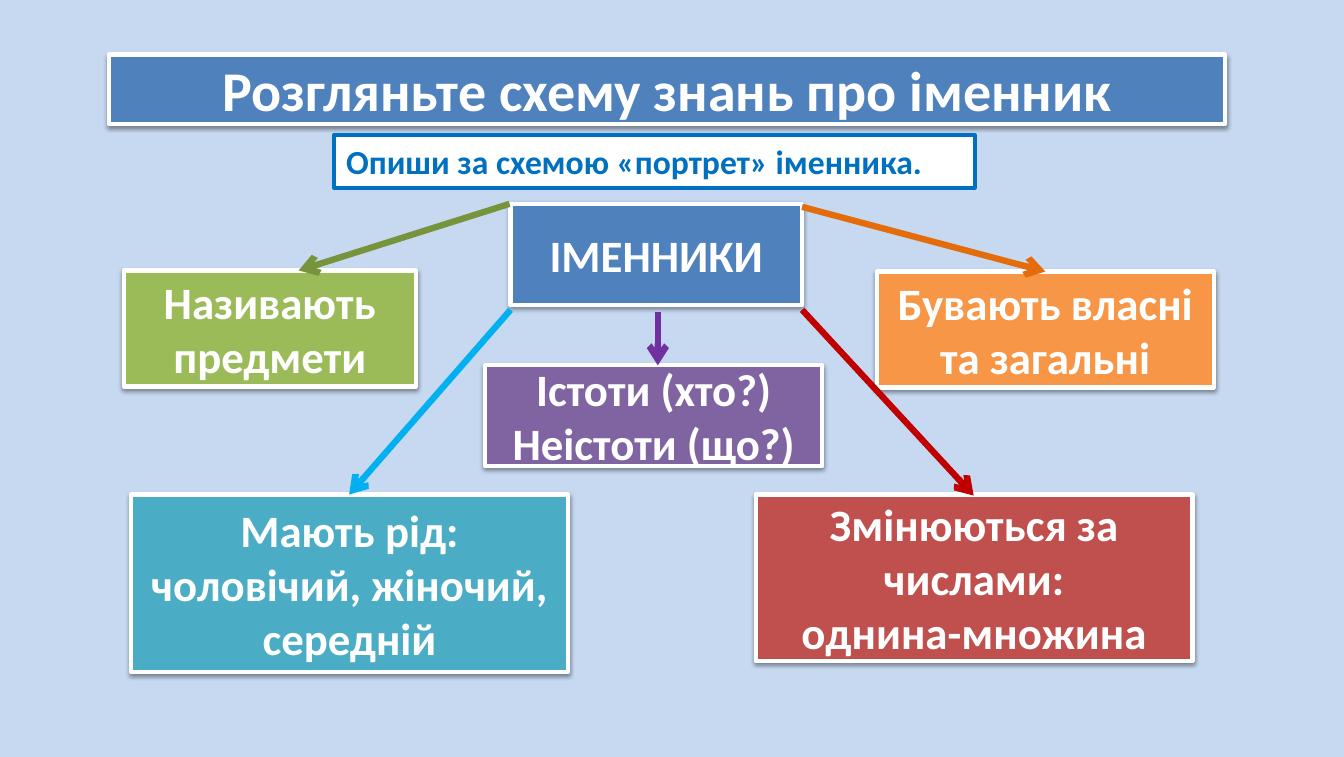
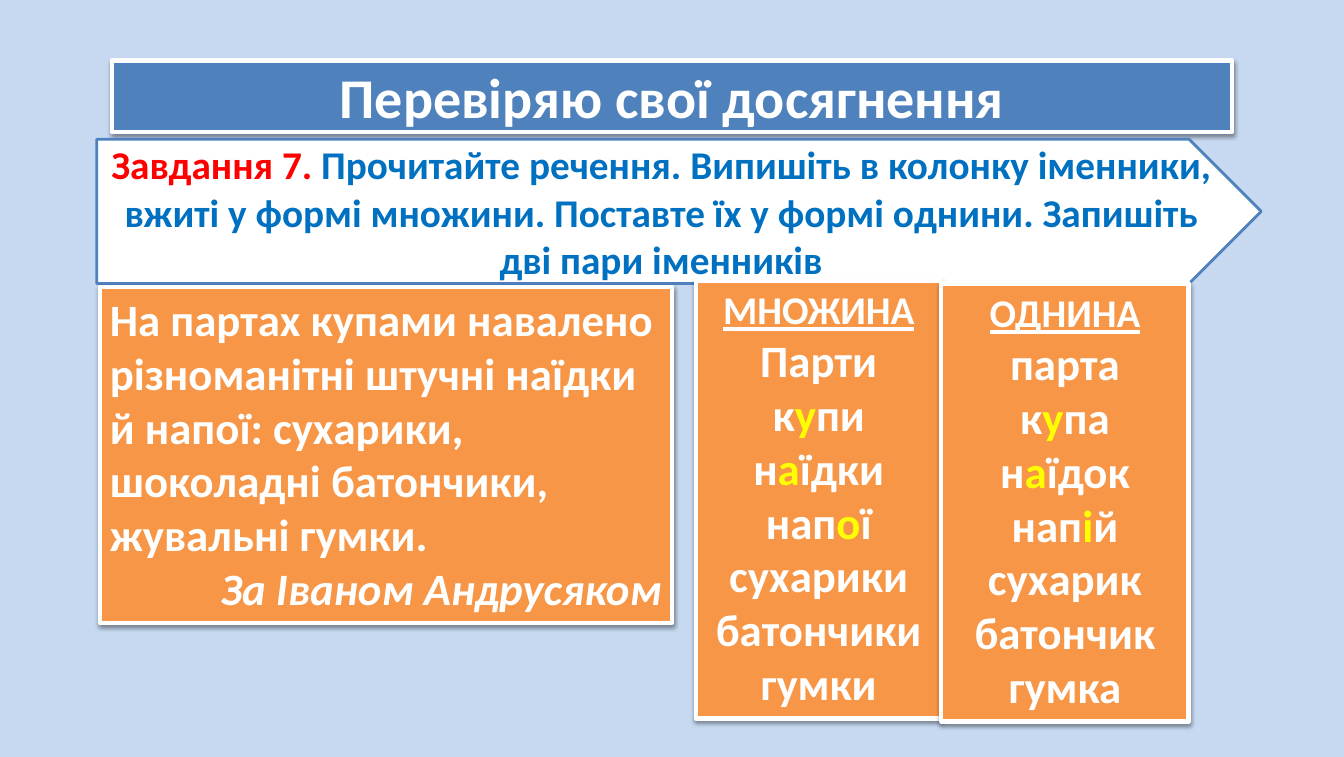
import pptx
import pptx.util
import pptx.dml.color
import pptx.enum.shapes
import pptx.enum.text
import pptx.oxml
import pptx.oxml.ns

Inches = pptx.util.Inches
Pt = pptx.util.Pt
SHAPE = pptx.enum.shapes.MSO_SHAPE
ALIGN = pptx.enum.text.PP_ALIGN
ANCHOR = pptx.enum.text.MSO_ANCHOR

# Shared look
FONT = "Calibri"
BACKGROUND, WHITE, BLUE, ORANGE = "C6D9F1", "FFFFFF", "4F81BD", "F79646"
TASK_BLUE, RED, YELLOW = "0070C0", "FF0000", "FFFF00"
TITLE_SIZE, BODY_SIZE, TASK_SIZE, HINT_SIZE = 40, 32, 28, 24
SHADOW = (
    '<a:effectLst %s><a:outerShdw blurRad="40000" dist="20000" dir="5400000" rotWithShape="0">'
    '<a:srgbClr val="000000"><a:alpha val="38000"/></a:srgbClr></a:outerShdw></a:effectLst>'
    % pptx.oxml.ns.nsdecls("a")
)


def rgb(code):
    return pptx.dml.color.RGBColor.from_string(code)


def add_panel(slide, box, fill, line=WHITE, line_width=3, kind=SHAPE.RECTANGLE,
              shadow=True, anchor=ANCHOR.MIDDLE, grow=False, inset=(0.1, 0.05)):
    """Draw a filled, outlined panel and return its text frame."""
    panel = slide.shapes.add_shape(kind, *(Inches(v) for v in box))
    panel.fill.solid()
    panel.fill.fore_color.rgb = rgb(fill)
    panel.line.color.rgb = rgb(line)
    panel.line.width = Pt(line_width)
    panel.shadow.inherit = False
    if shadow:
        properties = panel._element.spPr
        properties.remove(properties.find(pptx.oxml.ns.qn("a:effectLst")))
        properties.append(pptx.oxml.parse_xml(SHADOW))
    frame = panel.text_frame
    frame.word_wrap = True
    frame.vertical_anchor = anchor
    frame.margin_left = frame.margin_right = Inches(inset[0])
    frame.margin_top = frame.margin_bottom = Inches(inset[1])
    if grow:
        frame.auto_size = pptx.enum.text.MSO_AUTO_SIZE.SHAPE_TO_FIT_TEXT
    return frame


def add_line(frame, runs, size=BODY_SIZE, align=ALIGN.CENTER, italic=None, underline=None):
    """Add one paragraph made of (text, colour) runs."""
    first = frame.paragraphs[0]
    paragraph = frame.add_paragraph() if first.runs else first
    paragraph.alignment = align
    for text, color in runs:
        run = paragraph.add_run()
        run.text = text
        run.font.name = FONT
        run.font.size = Pt(size)
        run.font.bold = True
        run.font.italic = italic
        run.font.underline = underline
        run.font.color.rgb = rgb(color)


def add_arrow(slide, start, end, color):
    arrow = slide.shapes.add_connector(
        pptx.enum.shapes.MSO_CONNECTOR.STRAIGHT, *(Inches(v) for v in (*start, *end)))
    arrow.line.color.rgb = rgb(color)
    arrow.line.width = Pt(4.5)
    arrow.line._get_or_add_ln().append(pptx.oxml.parse_xml(
        '<a:tailEnd type="arrow" %s/>' % pptx.oxml.ns.nsdecls("a")))
    arrow._element.spPr.append(pptx.oxml.parse_xml(
        "<a:effectLst %s/>" % pptx.oxml.ns.nsdecls("a")))


def add_slide(deck, title, title_box, inset=(0.1, 0.05)):
    slide = deck.slides.add_slide(deck.slide_layouts[6])
    slide.background.fill.solid()
    slide.background.fill.fore_color.rgb = rgb(BACKGROUND)
    add_line(add_panel(slide, title_box, BLUE, inset=inset), [(title, WHITE)], TITLE_SIZE)
    return slide


def add_hint(slide, box, text):
    frame = add_panel(slide, box, WHITE, TASK_BLUE, shadow=False,
                      anchor=ANCHOR.TOP, grow=True, inset=(0.12, 0.06))
    add_line(frame, [(text, TASK_BLUE)], HINT_SIZE, ALIGN.LEFT)


# Scheme nodes: place inside the scheme, fill, lines of text
NODES = [
    ((3.83, 0, 2.89, 1), BLUE, ["ІМЕННИКИ"]),
    ((0, 0.66, 2.89, 1.15), "9BBB59", ["Називають предмети"]),
    ((3.58, 1.6, 3.34, 1), "8064A2", ["Істоти (хто?)", "Неістоти (що?)"]),
    ((7.46, 0.67, 3.34, 1.15), ORANGE, ["Бувають власні та загальні"]),
    ((0.07, 2.88, 4.33, 1.76), "4BACC6", ["Мають рід:", "чоловічий, жіночий, середній"]),
    ((6.26, 2.88, 4.33, 1.65), "C0504D", ["Змінюються за числами:", "однина-множина"]),
]
# Scheme arrows: start, end, colour
ARROWS = [
    ((3.82, 0), (1.73, 0.66), "77933C"),
    ((6.72, 0.03), (9.13, 0.67), "E46C0A"),
    ((5.29, 1.07), (5.29, 1.6), "7030A0"),
    ((3.83, 1.05), (2.23, 2.88), "00B0F0"),
    ((6.72, 1.05), (8.42, 2.89), "C00000"),
]


def add_scheme(slide, left, top):
    for (x, y, width, height), fill, lines in NODES:
        frame = add_panel(slide, (left + x, top + y, width, height), fill)
        for text in lines:
            add_line(frame, [(text, WHITE)])
    for start, end, color in ARROWS:
        add_arrow(slide, *((left + x, top + y) for x, y in (start, end)), color)


def add_task(slide, box, label, text):
    frame = add_panel(slide, box, WHITE, BLUE, 2, SHAPE.PENTAGON, shadow=False)
    add_line(frame, [(label, RED), (text, TASK_BLUE)], TASK_SIZE)


def add_quote(slide, box, text, author):
    frame = add_panel(slide, box, ORANGE, anchor=ANCHOR.TOP, grow=True)
    add_line(frame, [(text, WHITE)], align=ALIGN.LEFT)
    add_line(frame, [(author, WHITE)], align=ALIGN.RIGHT, italic=True)


def add_word_column(slide, box, heading, words):
    """List words; the part between bars is the highlighted vowel."""
    frame = add_panel(slide, box, ORANGE, anchor=ANCHOR.TOP, grow=True)
    add_line(frame, [(heading, WHITE)], TASK_SIZE, underline=True)
    for word in words.split():
        add_line(frame, zip(word.split("|"), (WHITE, YELLOW, WHITE)))


def main():
    deck = pptx.Presentation()
    deck.slide_width, deck.slide_height = Inches(13.32), Inches(7.5)

    # Scheme of the noun
    scheme = add_slide(deck, "Розгляньте схему знань про іменник",
                       (1.08, 0.54, 11.06, 0.69), (0.12, 0.06))
    add_hint(scheme, (3.31, 1.34, 6.35, 0.52), "Опиши за схемою «портрет» іменника.")
    add_scheme(scheme, 1.23, 2.02)

    # Exercise with word pairs
    exercise = add_slide(deck, "Перевіряю свої досягнення", (1.11, 0.6, 11.1, 0.71))
    add_task(exercise, (0.96, 1.38, 11.54, 1.43), "Завдання 7. ",
             "Прочитайте речення. Випишіть в колонку іменники, вжиті у формі множини. "
             "Поставте їх у формі однини. Запишіть дві пари іменників")
    add_quote(exercise, (0.99, 2.84, 5.67, 3.33),
              "На партах купами навалено різноманітні штучні наїдки й напої: сухарики, "
              "шоколадні батончики, жувальні гумки.", "За Іваном Андрусяком")
    add_word_column(exercise, (6.9, 2.78, 2.43, 4.34), "МНОЖИНА",
                    "Парти к|у|пи н|а|їдки нап|о|ї сухарики батончики гумки")
    add_word_column(exercise, (9.33, 2.81, 2.45, 4.34), "ОДНИНА",
                    "парта к|у|па н|а|їдок нап|і|й сухарик батончик гумка")

    deck.save("out.pptx")


if __name__ == "__main__":
    main()
